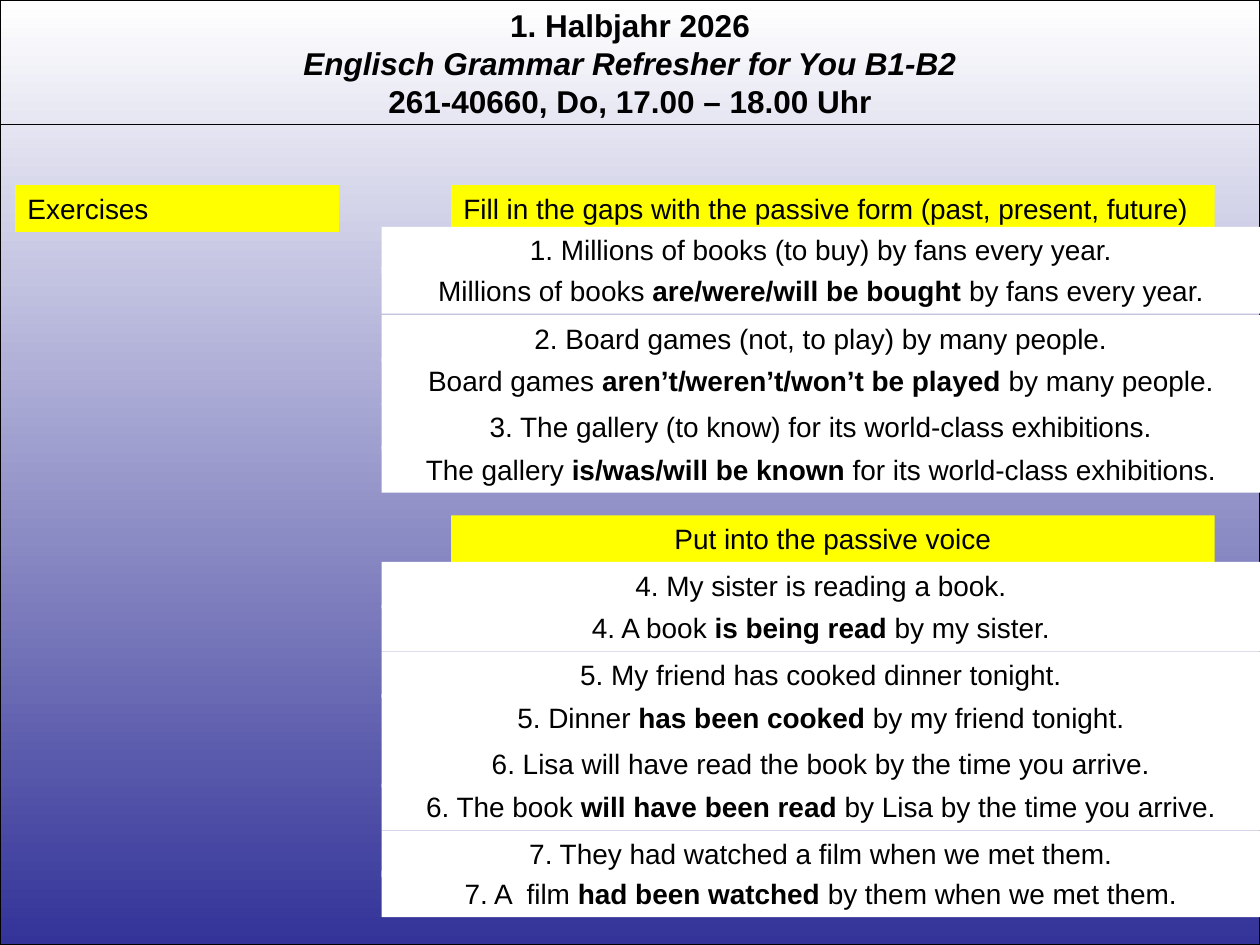
from pptx import Presentation
from pptx.dml.color import RGBColor
from pptx.enum.shapes import MSO_CONNECTOR, MSO_SHAPE
from pptx.enum.text import MSO_ANCHOR, MSO_AUTO_SIZE, PP_ALIGN
from pptx.oxml.ns import qn
from pptx.util import Inches, Pt
from lxml import etree

RECT = MSO_SHAPE.RECTANGLE
LINE = MSO_CONNECTOR.STRAIGHT
TOP = MSO_ANCHOR.TOP
GROW = MSO_AUTO_SIZE.SHAPE_TO_FIT_TEXT
LEFT, MID = PP_ALIGN.LEFT, PP_ALIGN.CENTER

HUES = {"ink": "000000", "paper": "FFFFFF", "mark": "FFFF00", "deep": "333399"}
FONT = "Arial"
ROW = 0.37


def tint(name):
    return RGBColor.from_string(HUES[name])


def write(para, text, size=16, bold=False, italic=False, align=MID):
    para.alignment = align
    run = para.add_run()
    run.text = text
    font = run.font
    font.name, font.size = FONT, Pt(size)
    font.bold, font.italic = bold, italic
    font.color.rgb = tint("ink")


class Sheet:
    def __init__(self, slide):
        self.slide = slide
        self.shapes = slide.shapes

    def frame(self, shape):
        frame = shape.text_frame
        frame.word_wrap = True
        frame.auto_size = GROW
        frame.vertical_anchor = TOP
        return frame

    def rect(self, x, y, wide, high):
        shape = self.shapes.add_shape(
            RECT, Inches(x), Inches(y), Inches(wide), Inches(high))
        shape.shadow.inherit = False
        return shape

    def back(self):
        shape = self.rect(0, 0, 10, 7.5)
        shape.fill.gradient()
        shape.fill.gradient_angle = 270
        for stop, place, name in zip(
                shape.fill.gradient_stops, (0, 1), ("paper", "deep")):
            stop.position = place
            stop.color.rgb = tint(name)
        shape.line.color.rgb = tint("ink")
        shape.line.width = Pt(0.75)
        self.shapes.title.element.addprevious(shape.element)

    def title(self, lines):
        shape = self.shapes.title
        shape.left, shape.top = Inches(0), Inches(0)
        shape.width, shape.height = Inches(10), Inches(1.01)
        frame = self.frame(shape)
        for num, (text, italic) in enumerate(lines):
            para = frame.add_paragraph() if num else frame.paragraphs[0]
            write(para, text, size=18, bold=True, italic=italic)

    def rule(self, y):
        line = self.shapes.add_connector(
            LINE, Inches(0), Inches(y), Inches(10), Inches(y))
        line.line.color.rgb = tint("ink")
        line.line.width = Pt(0.75)
        etree.SubElement(line.element.spPr, qn("a:effectLst"))

    def bar(self, x, y, wide, parts, fill="paper", align=MID):
        shape = self.rect(x, y, wide, ROW)
        shape.fill.solid()
        shape.fill.fore_color.rgb = tint(fill)
        shape.line.fill.background()
        para = self.frame(shape).paragraphs[0]
        for num, text in enumerate(parts):
            write(para, text, bold=num == 1, align=align)

    def head(self, y, text, x=3.58, wide=6.06, align=MID):
        self.bar(x, y, wide, [text], fill="mark", align=align)

    def pairs(self, top, step, tasks):
        for num, (ask, reply, gap) in enumerate(tasks):
            y = top + num * step
            self.bar(3.03, y, 6.97, [ask])
            self.bar(3.03, y + gap, 6.97, reply)


TITLE = [
    ("1. Halbjahr 2026", False),
    ("Englisch Grammar Refresher for You B1-B2", True),
    ("261-40660, Do, 17.00 – 18.00 Uhr", False),
]
GAPS = [
    ("1. Millions of books (to buy) by fans every year.",
     ("Millions of books ", "are/were/will be bought ", "by fans every year."),
     0.32),
    ("2. Board games (not, to play) by many people.",
     ("Board games ", "aren’t/weren’t/won’t be played ", "by many people."),
     0.34),
    ("3. The gallery (to know) for its world-class exhibitions.",
     ("The gallery ", "is/was/will be known ",
      "for its world-class exhibitions."), 0.34),
]
VOICE = [
    ("4. My sister is reading a book.",
     ("4. A book ", "is being read ", "by my sister."), 0.34),
    ("5. My friend has cooked dinner tonight.",
     ("5. Dinner ", "has been cooked ", "by my friend tonight."), 0.34),
    ("6. Lisa will have read the book by the time you arrive.",
     ("6. The book ", "will have been read ",
      "by Lisa by the time you arrive."), 0.34),
    ("7. They had watched a film when we met them.",
     ("7. A  film ", "had been watched ", "by them when we met them."), 0.32),
]


def main():
    deck = Presentation()
    deck.slide_width, deck.slide_height = Inches(10), Inches(7.5)
    sheet = Sheet(deck.slides.add_slide(deck.slide_layouts[5]))
    sheet.back()
    sheet.title(TITLE)
    sheet.rule(0.99)
    sheet.head(1.47, "Exercises", x=0.12, wide=2.57, align=LEFT)
    sheet.head(
        1.47, "Fill in the gaps with the passive form (past, present, future)",
        align=LEFT)
    sheet.pairs(1.8, 0.7, GAPS)
    sheet.head(4.09, "Put into the passive voice")
    sheet.pairs(4.46, 0.71, VOICE)
    deck.save("out.pptx")


if __name__ == "__main__":
    main()
